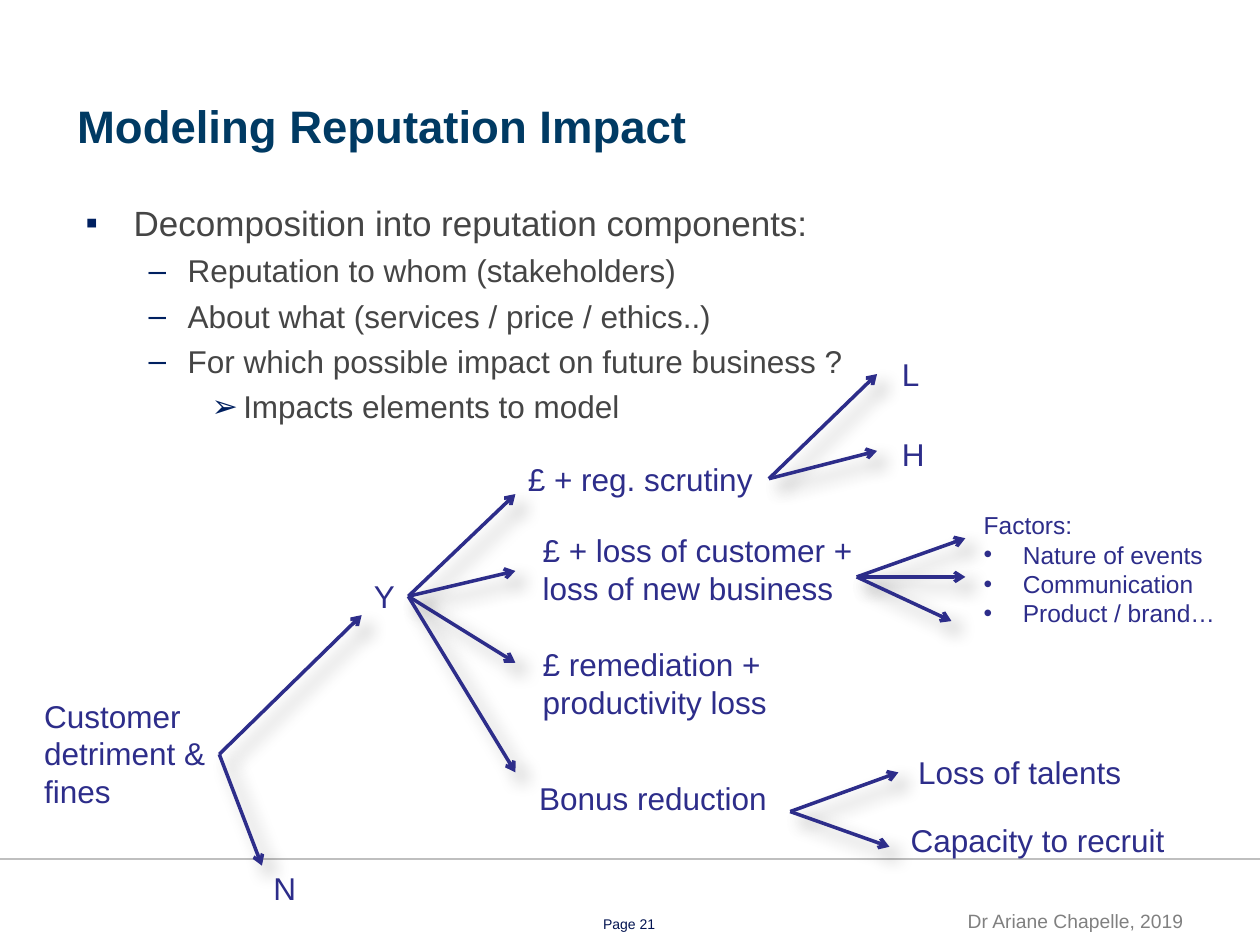
from lxml import etree
from pptx import Presentation
from pptx.dml.color import RGBColor
from pptx.enum.shapes import MSO_CONNECTOR
from pptx.enum.text import MSO_ANCHOR, MSO_AUTO_SIZE, PP_ALIGN
from pptx.oxml import parse_xml
from pptx.oxml.ns import nsdecls, qn
from pptx.util import Cm, Pt

STRAIGHT = MSO_CONNECTOR.STRAIGHT
TOP, MIDDLE = MSO_ANCHOR.TOP, MSO_ANCHOR.MIDDLE
LEFT, CENTER, RIGHT = PP_ALIGN.LEFT, PP_ALIGN.CENTER, PP_ALIGN.RIGHT
FIXED, GROW = MSO_AUTO_SIZE.NONE, MSO_AUTO_SIZE.SHAPE_TO_FIT_TEXT
RIGHT_SIDE = 3

NAVY = RGBColor(0x00, 0x3A, 0x63)
BULLET_BLUE = RGBColor(0x00, 0x20, 0x60)
INDIGO = RGBColor(0x2D, 0x2D, 0x8A)
PAGE_BLUE = RGBColor(0x03, 0x14, 0x51)
CHARCOAL = RGBColor(0x45, 0x45, 0x45)
GREY = RGBColor(0x80, 0x80, 0x80)
RULE_GREY = RGBColor(0xBF, 0xBF, 0xBF)

TITLE_FONT = {"size": Pt(26), "bold": True}
NODE_FONT = {"size": Pt(18)}
FACTOR_FONT = {"size": Pt(14)}
LINE_HEIGHT = 1.02

# Per list level: bullet, left margin and hanging indent in cm, text size
LEVELS = [("▪", 0.97, 0.97, 20), ("–", 2.06, 0.79, 18), ("➢", 3.18, 0.64, 18)]
OUTLINE = [
    (0, "Decomposition into reputation components:"),
    (1, "Reputation to whom (stakeholders)"),
    (1, "About what (services / price / ethics..)"),
    (1, "For which possible impact on future business ?"),
    (2, "Impacts elements to model"),
]

# Name: text, left, top, width, height (cm), wraps
NODES = {
    "detriment": ("Customer detriment & fines", 0.64, 13.92, 3.78, 2.57, True),
    "yes": ("Y", 7.29, 11.51, 0.94, LINE_HEIGHT, False),
    "no": ("N", 5.26, 17.4, 0.97, LINE_HEIGHT, False),
    "scrutiny": ("£ + reg. scrutiny", 10.39, 9.14, 5.11, LINE_HEIGHT, False),
    "customers": ("£ + loss of customer + loss of new business",
                  10.69, 10.59, 6.86, 1.8, True),
    "remediation": ("£ remediation + productivity loss", 10.69, 12.88, 5.36, 1.8, True),
    "bonus": ("Bonus reduction", 10.62, 15.57, 5.36, LINE_HEIGHT, True),
    "low": ("L", 17.93, 7.04, 0.84, LINE_HEIGHT, False),
    "high": ("H", 17.93, 8.64, 0.97, LINE_HEIGHT, False),
    "talents": ("Loss of talents", 18.26, 15.06, 4.65, LINE_HEIGHT, False),
    "recruit": ("Capacity to recruit", 18.11, 16.43, 5.69, LINE_HEIGHT, False),
}
FACTORS = ["Nature of events", "Communication", "Product / brand…"]

# Fans of arrows: joined node (or None), start point, end points (cm)
FANS = [
    ("detriment", (4.42, 15.2), [(7.29, 12.4), (5.28, 17.45)]),
    ("yes", (8.23, 12.02),
     [(10.39, 9.96), (10.39, 11.51), (10.39, 13.36), (10.39, 15.57)]),
    ("scrutiny", (15.5, 9.65), [(17.68, 7.54), (17.68, 9.09)]),
    (None, (15.93, 16.36), [(18.11, 15.57), (17.93, 17.07)]),
    (None, (17.27, 11.63), [(19.46, 10.85), (19.46, 11.63), (19.18, 12.52)]),
]


def apply_format(target, values):
    for name, value in values.items():
        setattr(target, name, value)


def place(shape, left, top, width, height):
    apply_format(shape, {"left": Cm(left), "top": Cm(top),
                         "width": Cm(width), "height": Cm(height)})


def write(para, text, colour, font):
    span = para.add_run()
    span.text = text
    apply_format(span.font, {"name": "Arial", **font})
    span.font.color.rgb = colour


def set_bullet(para, character, margin, hanging, colour):
    properties = para._p.get_or_add_pPr()
    properties.set("marL", str(Cm(margin)))
    properties.set("indent", str(-Cm(hanging)))
    bullet_colour = etree.SubElement(properties, qn("a:buClr"))
    etree.SubElement(bullet_colour, qn("a:srgbClr"), val=str(colour))
    etree.SubElement(properties, qn("a:buFont"), typeface="Arial")
    etree.SubElement(properties, qn("a:buChar"), char=character)


def add_label(page, text, area, colour, font, wrap=True, align=LEFT, fit=GROW):
    box = page.shapes.add_textbox(*map(Cm, area))
    apply_format(box.text_frame, {"word_wrap": wrap, "auto_size": fit})
    para = box.text_frame.paragraphs[0]
    para.alignment = align
    write(para, text, colour, font)
    return box


def add_line(page, start, end, colour, width):
    line = page.shapes.add_connector(STRAIGHT, *map(Cm, start + end))
    line.line.color.rgb = colour
    line.line.width = Pt(width)
    return line


def add_rule(page):
    rule = add_line(page, (0, 17.32), (25.4, 17.32), RULE_GREY, 1)
    etree.SubElement(rule._element.spPr, qn("a:effectLst"))


def add_arrow(page, start, end):
    """Draw an open-headed arrow with a soft shadow."""
    arrow = add_line(page, start, end, INDIGO, 2)
    etree.SubElement(arrow.line._get_or_add_ln(), qn("a:tailEnd"), type="arrow")
    arrow._element.spPr.append(parse_xml(
        f'<a:effectLst {nsdecls("a")}>'
        f'<a:outerShdw blurRad="{Pt(10.2)}" dist="{Pt(8)}" dir="2700000" rotWithShape="0">'
        '<a:srgbClr val="000000"><a:alpha val="35000"/></a:srgbClr>'
        '</a:outerShdw></a:effectLst>'))
    return arrow


def fill_title(page):
    title = page.shapes.title
    place(title, 1.3, 1.93, 20.19, 1.19)
    apply_format(title.text_frame, {"vertical_anchor": MIDDLE, "auto_size": FIXED,
                                    "word_wrap": True})
    para = title.text_frame.paragraphs[0]
    para.alignment = LEFT
    write(para, "Modeling Reputation Impact", NAVY, TITLE_FONT)


def fill_outline(page):
    body = page.placeholders[1]
    place(body, 1.47, 3.94, 22.58, 5.13)
    frame = body.text_frame
    apply_format(frame, {"vertical_anchor": TOP, "auto_size": FIXED, "word_wrap": True})
    for index, (level, text) in enumerate(OUTLINE):
        para = frame.add_paragraph() if index else frame.paragraphs[0]
        character, margin, hanging, size = LEVELS[level]
        set_bullet(para, character, margin, hanging, BULLET_BLUE)
        apply_format(para, {"level": level, "alignment": LEFT,
                            "space_before": Pt(4.3 if index else 0)})
        write(para, text, CHARCOAL, {"size": Pt(size)})


def add_factors(page):
    box = add_label(page, "Factors:", (19.58, 10.16, 5.82, 2.64), INDIGO, FACTOR_FONT)
    for factor in FACTORS:
        para = box.text_frame.add_paragraph()
        set_bullet(para, "•", 0.79, 0.79, INDIGO)
        write(para, factor, INDIGO, FACTOR_FONT)


def add_tree(page):
    boxes = {}
    for name, (text, *area, wrap) in NODES.items():
        boxes[name] = add_label(page, text, area, INDIGO, NODE_FONT, wrap)
    for name, start, ends in FANS:
        for end in ends:
            arrow = add_arrow(page, start, end)
            if name:
                arrow.begin_connect(boxes[name], RIGHT_SIDE)


def add_footer(page):
    add_rule(page)
    add_label(page, "Page 21", (10.69, 18.34, 3.99, 0.51), PAGE_BLUE,
              {"size": Pt(8)}, align=CENTER, fit=FIXED)
    add_label(page, "Dr Ariane Chapelle, 2019", (0.51, 18.21, 23.6, 0.74), GREY,
              {"size": Pt(11)}, align=RIGHT)


def main():
    deck = Presentation()
    deck.slide_width, deck.slide_height = Cm(25.4), Cm(19.05)
    page = deck.slides.add_slide(deck.slide_layouts[1])
    add_footer(page)
    fill_title(page)
    fill_outline(page)
    add_tree(page)
    add_factors(page)
    deck.save("out.pptx")


if __name__ == "__main__":
    main()
